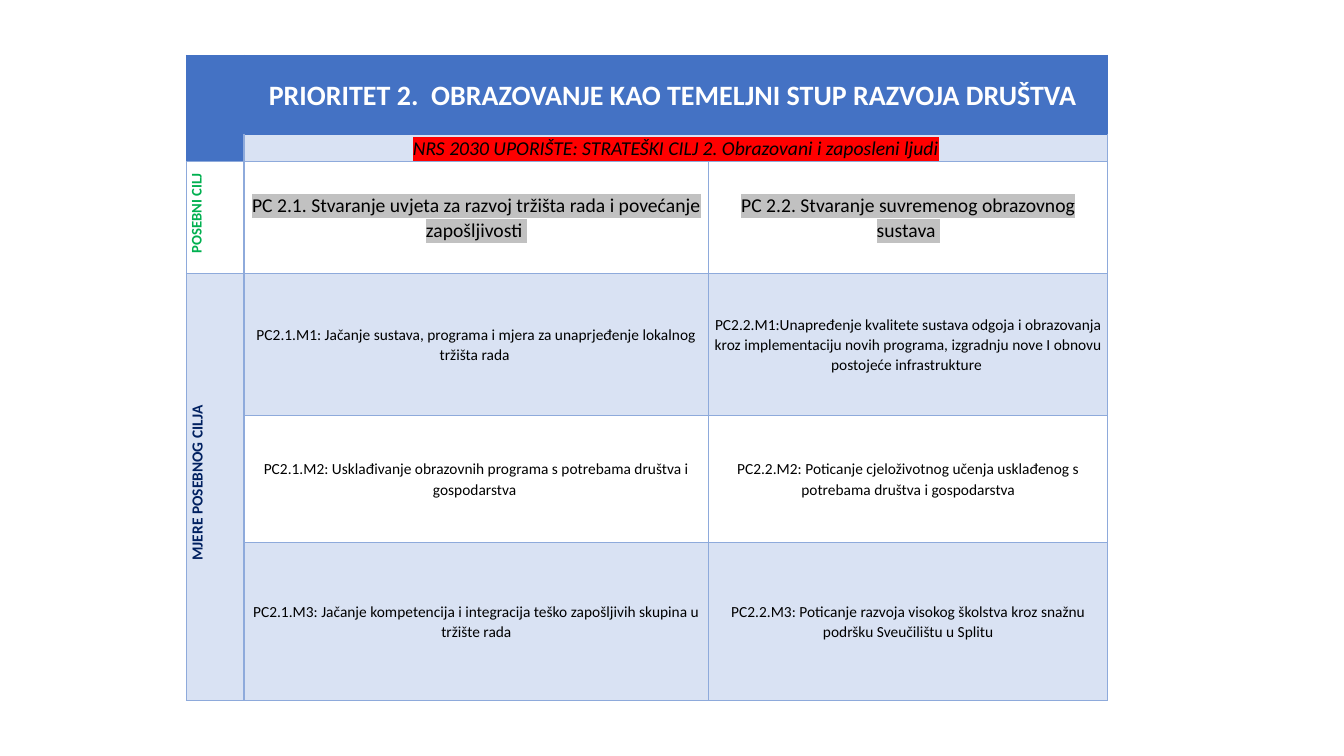
from dataclasses import dataclass

from lxml.etree import SubElement
from pptx import Presentation
from pptx.dml.color import RGBColor
from pptx.enum.text import MSO_ANCHOR as Anchor, PP_ALIGN as Align
from pptx.oxml import parse_xml
from pptx.oxml.ns import nsdecls, qn
from pptx.util import Cm, Pt


@dataclass(frozen=True)
class Theme:
    font: str = "Calibri"
    header: str = "4472C4"
    band: str = "D9E2F3"
    border: str = "8EAADB"
    white: str = "FFFFFF"
    black: str = "000000"
    green: str = "00B050"
    navy: str = "002060"
    red: str = "FF0000"
    grey: str = "C1C1C1"
    title_size: float = 20
    goal_size: float = 14
    measure_size: float = 11
    label_size: float = 10.5


THEME = Theme()
COLUMN_WIDTHS = (1.45, 11.71, 10.06)
ROW_HEIGHTS = (1.98, 0.69, 2.82, 3.58, 3.2, 3.99)
BANDED_ROWS = (1, 3, 5)
GOALS = (
    "PC 2.1. Stvaranje uvjeta za razvoj tržišta rada i povećanje zapošljivosti ",
    "PC 2.2. Stvaranje suvremenog obrazovnog sustava ",
)
MEASURES = (
    (
        "PC2.1.M1: Jačanje sustava, programa i mjera za unaprjeđenje lokalnog tržišta rada ",
        "PC2.2.M1:Unapređenje kvalitete sustava odgoja i obrazovanja kroz implementaciju "
        "novih programa, izgradnju nove I obnovu postojeće infrastrukture ",
    ),
    (
        "PC2.1.M2: Usklađivanje obrazovnih programa s potrebama društva i gospodarstva ",
        "PC2.2.M2: Poticanje cjeloživotnog učenja usklađenog s potrebama društva i gospodarstva",
    ),
    (
        "PC2.1.M3: Jačanje kompetencija i integracija teško zapošljivih skupina u tržište rada",
        "PC2.2.M3: Poticanje razvoja visokog školstva kroz snažnu podršku Sveučilištu u Splitu",
    ),
)


def write_text(cell, text, size=THEME.measure_size, color=THEME.black,
               bold=False, italic=False, highlight=None):
    paragraph = cell.text_frame.paragraphs[0]
    paragraph.alignment = Align.CENTER
    paragraph.line_spacing = 1.07
    paragraph.space_after = Pt(8)
    run = paragraph.add_run()
    run.text = text
    font = run.font
    font.name, font.size, font.bold, font.italic = THEME.font, Pt(size), bold, italic
    font.color.rgb = RGBColor.from_string(color)
    if highlight:
        fill = run._r.get_or_add_rPr().find(qn("a:solidFill"))
        fill.addnext(parse_xml(
            f'<a:highlight {nsdecls("a")}><a:srgbClr val="{highlight}"/></a:highlight>'
        ))


def write_label(cell, text, **text_format):
    write_text(cell, text, bold=True, **text_format)
    cell._tc.get_or_add_tcPr().set("vert", "vert270")
    properties = cell.text_frame.paragraphs[0]._p.get_or_add_pPr()
    properties.set("marL", str(Cm(0.2)))
    properties.set("indent", "0")


def add_border(cell, side, color):
    line = SubElement(cell._tc.get_or_add_tcPr(), qn(f"a:ln{side}"), w=str(Pt(1)))
    fill = SubElement(line, qn("a:solidFill"))
    SubElement(fill, qn("a:srgbClr"), val=color)


def format_cell(cell, row, column):
    cell.margin_left = cell.margin_right = Cm(0.08)
    cell.margin_top = cell.margin_bottom = 0
    cell.vertical_anchor = Anchor.MIDDLE
    in_corner = row < 2 and column == 0
    for side in "LRTB":
        is_header = row == 0 or (row == 1 and (side == "T" or in_corner and side == "L"))
        add_border(cell, side, THEME.header if is_header else THEME.border)
    if row == 0 or in_corner:
        color = THEME.header
    elif row in BANDED_ROWS or (row > 2 and column == 0):
        color = THEME.band
    else:
        color = None
    if color:
        cell.fill.solid()
        cell.fill.fore_color.rgb = RGBColor.from_string(color)
    else:
        cell.fill.background()
    paragraph = cell.text_frame.paragraphs[0]._p
    if not cell.text:
        SubElement(paragraph, qn("a:endParaRPr"), sz="1000")


def add_priority_table(slide):
    table = slide.shapes.add_table(
        len(ROW_HEIGHTS), len(COLUMN_WIDTHS), Cm(4.7), Cm(1.4),
        Cm(sum(COLUMN_WIDTHS)), Cm(sum(ROW_HEIGHTS)),
    ).table
    table.first_row = table.horz_banding = False
    for column, width in zip(table.columns, COLUMN_WIDTHS):
        column.width = Cm(width)
    for row, height in zip(table.rows, ROW_HEIGHTS):
        row.height = Cm(height)
    for first, last in (((0, 0), (1, 0)), ((0, 1), (0, 2)),
                        ((1, 1), (1, 2)), ((3, 0), (5, 0))):
        table.cell(*first).merge(table.cell(*last))
    return table


def fill_table(table):
    write_text(table.cell(0, 1), "PRIORITET 2.  OBRAZOVANJE KAO TEMELJNI STUP RAZVOJA DRUŠTVA ",
               size=THEME.title_size, color=THEME.white, bold=True)
    write_text(table.cell(1, 1),
               "NRS 2030 UPORIŠTE: STRATEŠKI CILJ 2. Obrazovani i zaposleni ljudi",
               size=THEME.goal_size, italic=True, highlight=THEME.red)
    write_label(table.cell(2, 0), "POSEBNI CILJ", size=THEME.label_size, color=THEME.green)
    write_label(table.cell(3, 0), "MJERE POSEBNOG CILJA", color=THEME.navy)
    for column, goal in enumerate(GOALS, start=1):
        write_text(table.cell(2, column), goal, size=THEME.goal_size, highlight=THEME.grey)
    for row, measures in enumerate(MEASURES, start=3):
        for column, measure in enumerate(measures, start=1):
            write_text(table.cell(row, column), measure)
    for row in range(len(ROW_HEIGHTS)):
        for column in range(len(COLUMN_WIDTHS)):
            format_cell(table.cell(row, column), row, column)


def main():
    presentation = Presentation()
    presentation.slide_width, presentation.slide_height = Cm(33.87), Cm(19.05)
    slide = presentation.slides.add_slide(presentation.slide_layouts[6])
    fill_table(add_priority_table(slide))
    presentation.save("out.pptx")


if __name__ == "__main__":
    main()
